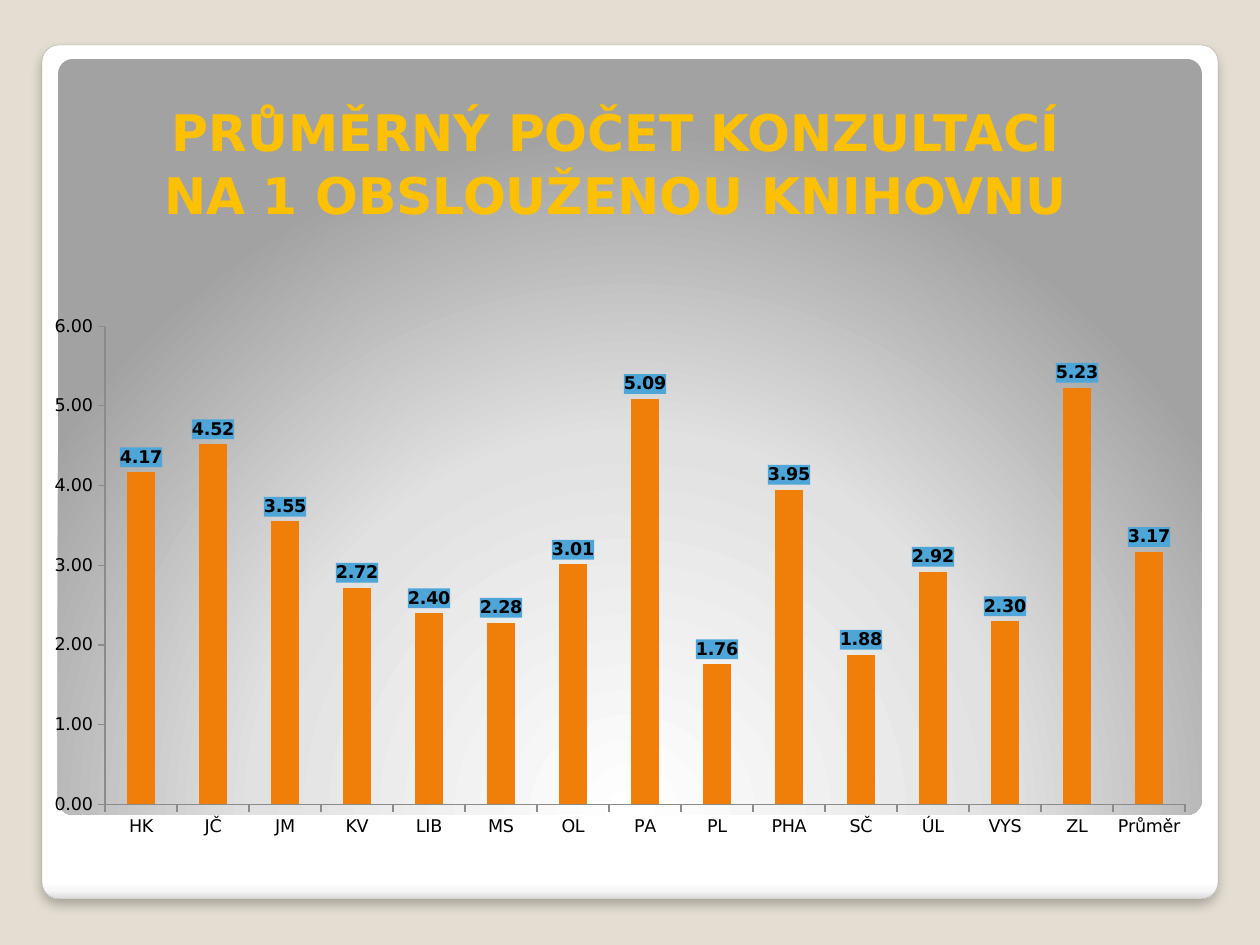
import pptx
import pptx.util
import pptx.dml.color
import pptx.chart.data
import pptx.enum.chart
import pptx.enum.shapes
import pptx.enum.text
import pptx.oxml

# Content
TITLE = "PRŮMĚRNÝ POČET KONZULTACÍ \vNA 1 OBSLOUŽENOU KNIHOVNU "
DATA = {
    "HK": 4.17, "JČ": 4.52, "JM": 3.55, "KV": 2.72, "LIB": 2.40,
    "MS": 2.28, "OL": 3.01, "PA": 5.09, "PL": 1.76, "PHA": 3.95,
    "SČ": 1.88, "ÚL": 2.92, "VYS": 2.30, "ZL": 5.23, "Průměr": 3.17,
}

# Places in px: left, top, width, height
PLACES = {
    "card": (42, 45, 1176, 854),
    "panel": (58, 59, 1144, 756),
    "title": (84, 86, 1081, 139),
    "chart": (54, 213, 1160, 636),
}
PLOT = {"x": 0.044, "y": 0.178, "w": 0.931, "h": 0.752}

THEME = {
    "font": "DejaVu Sans", "title_size": 28.8, "chart_size": 10,
    "back": "E3DED1", "edge": "A4A4A4", "title": "FFC000", "text": "000000",
    "bar": "F07F09", "label": "4EA5D8", "axis": "8B8B8B",
    "card": [(0, "FFFFFF"), (98, "FFFFFF"), (99, "F7F7F7"), (100, "DADADA")],
    "panel": [(0, "FFFFFF"), (55, "E1E1E1"), (100, "A2A2A2")],
}
LINEAR = '<a:lin ang="5400000" scaled="0"/>'
RADIAL = ('<a:path path="circle"><a:fillToRect l="50000" t="175000" '
          'r="50000" b="-75000"/></a:path>')
NS = ('xmlns:a="http://schemas.openxmlformats.org/drawingml/2006/main" '
      'xmlns:c="http://schemas.openxmlformats.org/drawingml/2006/chart"')
SCALE = 914400 / 126
Pt = pptx.util.Pt


def px(num):
    return round(num * SCALE)


def place(name):
    return [px(num) for num in PLACES[name]]


def color(name):
    return pptx.dml.color.RGBColor.from_string(THEME[name])


def style(item, form):
    for key, val in form.items():
        setattr(item, key, val)


def parse(tag, attrs, body):
    return pptx.oxml.parse_xml(f"<{tag} {NS} {attrs}>{body}</{tag}>")


def frame(slide, name, shade):
    """Add a rounded rectangle with a gradient fill."""
    kind = pptx.enum.shapes.MSO_SHAPE.ROUNDED_RECTANGLE
    shape = slide.shapes.add_shape(kind, *place(name))
    shape.adjustments[0] = 0.02
    shape.shadow.inherit = False
    shape.line.fill.background()
    shape.fill.solid()
    stops = "".join(
        f'<a:gs pos="{pos * 1000}"><a:srgbClr val="{tone}"/></a:gs>'
        for pos, tone in THEME[name])
    grad = parse("a:gradFill", 'rotWithShape="1"',
                 f"<a:gsLst>{stops}</a:gsLst>{shade}")
    props = shape._element.spPr
    props.replace(props.find(pptx.oxml.ns.qn("a:solidFill")), grad)
    return shape


def heading(slide):
    box = slide.shapes.add_textbox(*place("title"))
    style(box.text_frame, {
        "word_wrap": True, "margin_bottom": 0,
        "vertical_anchor": pptx.enum.text.MSO_ANCHOR.BOTTOM})
    para = box.text_frame.paragraphs[0]
    para.text = TITLE
    style(para, {"alignment": pptx.enum.text.PP_ALIGN.CENTER,
                 "line_spacing": 1.05})
    for run in para.runs:
        style(run.font, {"name": THEME["font"], "bold": True,
                         "size": Pt(THEME["title_size"])})
        run.font.color.rgb = color("title")


def graph(slide):
    enum = pptx.enum.chart
    data = pptx.chart.data.CategoryChartData(number_format="0.00")
    data.categories = list(DATA)
    data.add_series("Series 1", list(DATA.values()))
    chart = slide.shapes.add_chart(
        enum.XL_CHART_TYPE.COLUMN_CLUSTERED, *place("chart"), data).chart
    style(chart, {"has_legend": False, "has_title": False})
    style(chart.font, {"name": THEME["font"], "size": Pt(THEME["chart_size"])})
    chart.font.color.rgb = color("text")

    # Axes
    for axis in (chart.category_axis, chart.value_axis):
        style(axis, {"has_major_gridlines": False,
                     "major_tick_mark": enum.XL_TICK_MARK.OUTSIDE,
                     "minor_tick_mark": enum.XL_TICK_MARK.NONE})
        axis.format.line.color.rgb = color("axis")
        axis.format.line.width = Pt(0.75)
    style(chart.value_axis, {"minimum_scale": 0, "maximum_scale": 6,
                             "major_unit": 1})
    style(chart.value_axis.tick_labels, {"number_format": "0.00",
                                         "number_format_is_linked": False})

    # Bars and their labels
    plot = chart.plots[0]
    style(plot, {"gap_width": 150, "vary_by_categories": False})
    bars = plot.series[0]
    bars.format.fill.solid()
    bars.format.fill.fore_color.rgb = color("bar")
    tags = bars.data_labels
    style(tags, {"show_value": True, "number_format": "0.00",
                 "number_format_is_linked": False,
                 "position": enum.XL_LABEL_POSITION.OUTSIDE_END})
    style(tags.font, {"bold": True, "name": THEME["font"],
                      "size": Pt(THEME["chart_size"])})
    tags.font.color.rgb = color("text")
    qn = pptx.oxml.ns.qn
    fill = f'<a:solidFill><a:srgbClr val="{THEME["label"]}"/></a:solidFill>'
    tags._element.find(qn("c:numFmt")).addnext(parse("c:spPr", "", fill))

    # Fixed inner plot area
    area = chart._chartSpace.find(".//" + qn("c:plotArea"))
    for old in area.findall(qn("c:layout")):
        area.remove(old)
    rules = '<c:layoutTarget val="inner"/>'
    rules += "".join(f'<c:{key}Mode val="edge"/>' for key in "xy")
    rules += "".join(f'<c:{key} val="{val}"/>' for key, val in PLOT.items())
    area.insert(0, parse("c:layout", "",
                         f"<c:manualLayout>{rules}</c:manualLayout>"))


def main():
    deck = pptx.Presentation()
    style(deck, {"slide_width": px(1260), "slide_height": px(945)})
    slide = deck.slides.add_slide(deck.slide_layouts[6])
    slide.background.fill.solid()
    slide.background.fill.fore_color.rgb = color("back")

    # Card with a soft shadow, then the grey panel
    card = frame(slide, "card", LINEAR)
    card.line.color.rgb = color("edge")
    card.line.width = Pt(0.16)
    glow = parse("a:outerShdw",
                 f'blurRad="{Pt(6)}" dist="{Pt(4)}" dir="5400000"',
                 '<a:srgbClr val="000000"><a:alpha val="25000"/></a:srgbClr>')
    card._element.spPr.find(pptx.oxml.ns.qn("a:effectLst")).append(glow)
    frame(slide, "panel", RADIAL)

    heading(slide)
    graph(slide)
    deck.save("out.pptx")


if __name__ == "__main__":
    main()
